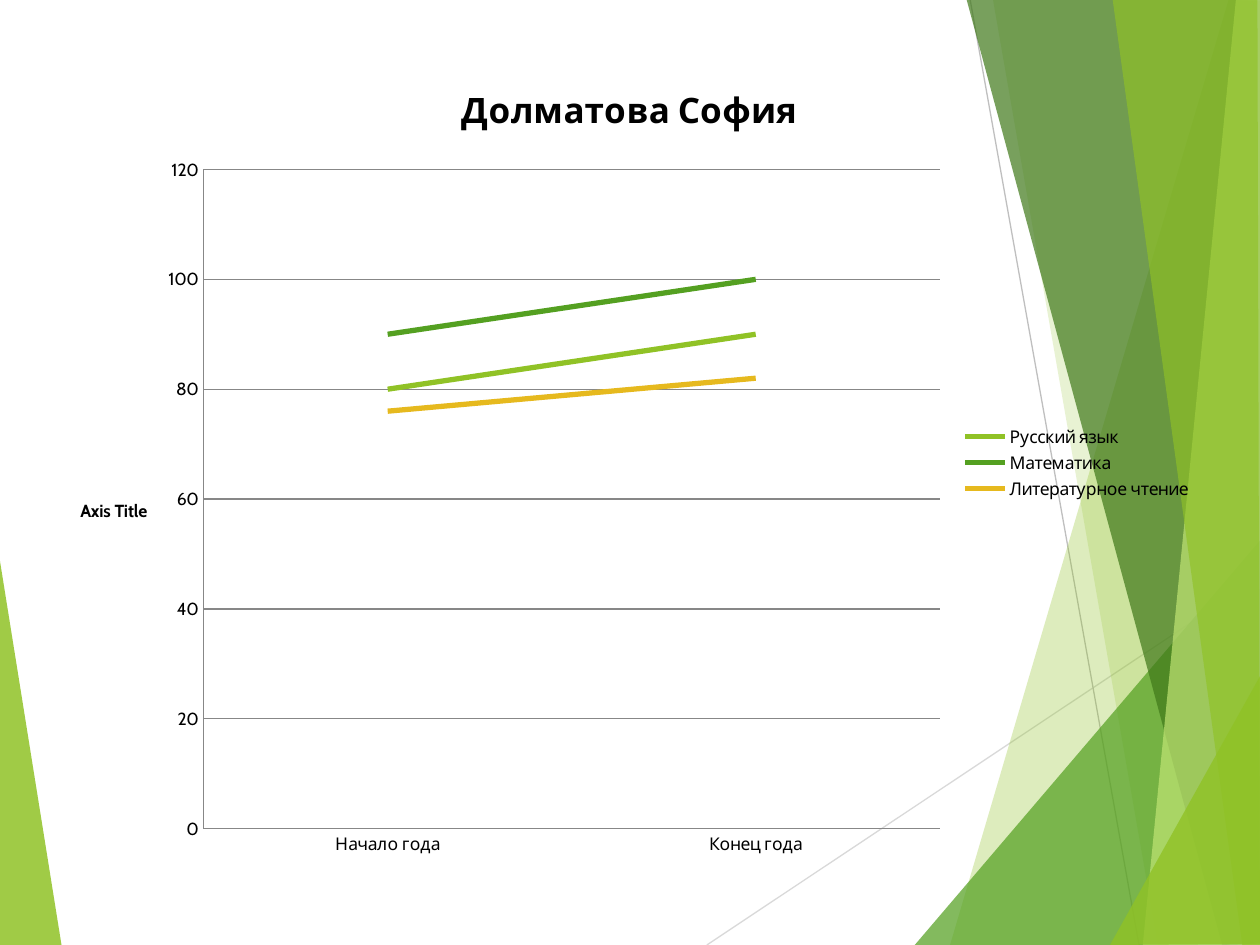
import pptx
import pptx.chart.data
import pptx.dml.color
import pptx.enum.chart
import pptx.enum.shapes
import pptx.oxml
import pptx.oxml.ns
import pptx.util
from lxml import etree

Cm, Pt = pptx.util.Cm, pptx.util.Pt

THEME = {
    "font": "Cabin", "text": "000000", "grid": "878787",
    "lime": "90C226", "green": "54A021", "forest": "3F7819", "pale": "C0E474",
    "gold": "E6B91E", "light_grey": "D9D9D9", "mid_grey": "BFBFBF",
    "title_pt": 20, "text_pt": 10, "series_pt": 3, "hairline_pt": 0.75,
}

TITLE = "Долматова София"
AXIS_TITLE = "Axis Title"
CATEGORIES = ["Начало года", "Конец года"]
SERIES = [
    ("Русский язык", [80, 90], "lime"),
    ("Математика", [90, 100], "green"),
    ("Литературное чтение", [76, 82], "gold"),
]

# Decoration is laid out in hundredths of an inch.
UNIT = Cm(2.54) / 100
LEFT_WEDGE = ("lime", 85, [(-1, 439), (49, 751), (-1, 750)])
RAYS = [
    ("light_grey", (561, 750), (1001, 457)),
    ("mid_grey", (770, 0), (904, 750)),
]
RIGHT_FACETS = [
    ("lime", 30, [(975, 0), (754, 750), (1002, 751), (1001, 1)]),
    ("lime", 20, [(788, -1), (919, 750), (1001, 750), (1001, -1)]),
    ("green", 72, [(726, 750), (1000, 429), (1001, 750)]),
    ("forest", 70, [(767, -1), (970, 750), (1001, 749), (1001, -1)]),
    ("pale", 70, [(981, -1), (907, 750), (1001, 750), (1000, -1)]),
    ("lime", 65, [(883, -1), (986, 750), (1000, 750), (998, -1)]),
    ("lime", 80, [(881, 750), (1001, 535), (1001, 749)]),
]

CHART_BOX = [Cm(v) for v in (1.09, 1.12, 23.19, 16.41)]
PLOT_BOX = {"x": 0.13, "y": 0.14, "w": 0.64, "h": 0.81}  # shares of the chart
AXIS_TITLE_AT = {"x": 0.02, "y": 0.54}


def rgb(name):
    return pptx.dml.color.RGBColor.from_string(THEME[name])


def add_facet(slide, color, opacity, points):
    builder = slide.shapes.build_freeform(*points[0], scale=UNIT)
    builder.add_line_segments(points[1:], close=True)
    s = builder.convert_to_shape()
    s.shadow.inherit = False
    s.line.fill.background()
    s.fill.solid()
    s.fill.fore_color.rgb = rgb(color)
    clr = s._element.spPr.find(".//" + pptx.oxml.ns.qn("a:srgbClr"))
    etree.SubElement(clr, pptx.oxml.ns.qn("a:alpha"), val=str(opacity * 1000))


def add_ray(slide, color, start, end):
    ends = [round(v * UNIT) for v in start + end]
    c = slide.shapes.add_connector(pptx.enum.shapes.MSO_CONNECTOR.STRAIGHT, *ends)
    c.line.color.rgb = rgb(color)
    c.line.width = Pt(THEME["hairline_pt"])
    etree.SubElement(c._element.spPr, pptx.oxml.ns.qn("a:effectLst"))


def manual_layout(box, inner=False):
    target = '<c:layoutTarget val="inner"/>' if inner else ""
    modes = "".join(f'<c:{k}Mode val="edge"/>' for k in ("x", "y"))
    sizes = "".join(f'<c:{k} val="{v}"/>' for k, v in box.items())
    return pptx.oxml.parse_xml(
        f'<c:layout {pptx.oxml.ns.nsdecls("c")}><c:manualLayout>'
        f"{target}{modes}{sizes}</c:manualLayout></c:layout>")


def set_layout(parent, layout, index):
    for old in parent.findall(pptx.oxml.ns.qn("c:layout")):
        parent.remove(old)
    parent.insert(index, layout)


def style_font(font, size, bold=False):
    font.name = THEME["font"]
    font.size = Pt(THEME[size])
    font.bold = bold
    font.color.rgb = rgb("text")


def set_title(title, text, size):
    tf = title.text_frame
    tf.text = text
    style_font(tf.paragraphs[0].runs[0].font, size, bold=True)


def style_line(line, color, width):
    line.color.rgb = rgb(color)
    line.width = Pt(THEME[width])


def add_progress_chart(slide):
    enums = pptx.enum.chart
    data = pptx.chart.data.CategoryChartData()
    data.categories = CATEGORIES
    for name, values, _ in SERIES:
        data.add_series(name, values)
    chart = slide.shapes.add_chart(enums.XL_CHART_TYPE.LINE, *CHART_BOX, data).chart
    style_font(chart.font, "text_pt")
    set_title(chart.chart_title, TITLE, "title_pt")
    chart.chart_title.include_in_layout = False

    chart.has_legend = True
    chart.legend.position = enums.XL_LEGEND_POSITION.RIGHT
    chart.legend.include_in_layout = False

    plot = chart.plots[0]
    plot.vary_by_categories = False
    for series, (_, _, color) in zip(plot.series, SERIES):
        series.smooth = False
        series.marker.style = enums.XL_MARKER_STYLE.NONE
        style_line(series.format.line, color, "series_pt")

    values = chart.value_axis
    values.minimum_scale, values.maximum_scale, values.major_unit = 0, 120, 20
    values.has_major_gridlines = True
    style_line(values.major_gridlines.format.line, "grid", "hairline_pt")
    for axis in (chart.category_axis, values):
        axis.major_tick_mark = enums.XL_TICK_MARK.NONE
        style_line(axis.format.line, "grid", "hairline_pt")
    set_title(values.axis_title, AXIS_TITLE, "text_pt")
    body = values.axis_title.text_frame._txBody.bodyPr
    body.set("rot", "0")
    body.set("vert", "horz")

    set_layout(values.axis_title._element, manual_layout(AXIS_TITLE_AT), 1)
    plot_area = chart._chartSpace.chart.plotArea
    set_layout(plot_area, manual_layout(PLOT_BOX, inner=True), 0)


def main():
    prs = pptx.Presentation()
    prs.slide_width, prs.slide_height = Cm(25.4), Cm(19.05)
    slide = prs.slides.add_slide(prs.slide_layouts[6])
    add_facet(slide, *LEFT_WEDGE)
    for ray in RAYS:
        add_ray(slide, *ray)
    for facet in RIGHT_FACETS:
        add_facet(slide, *facet)
    add_progress_chart(slide)
    prs.save("out.pptx")


if __name__ == "__main__":
    main()
